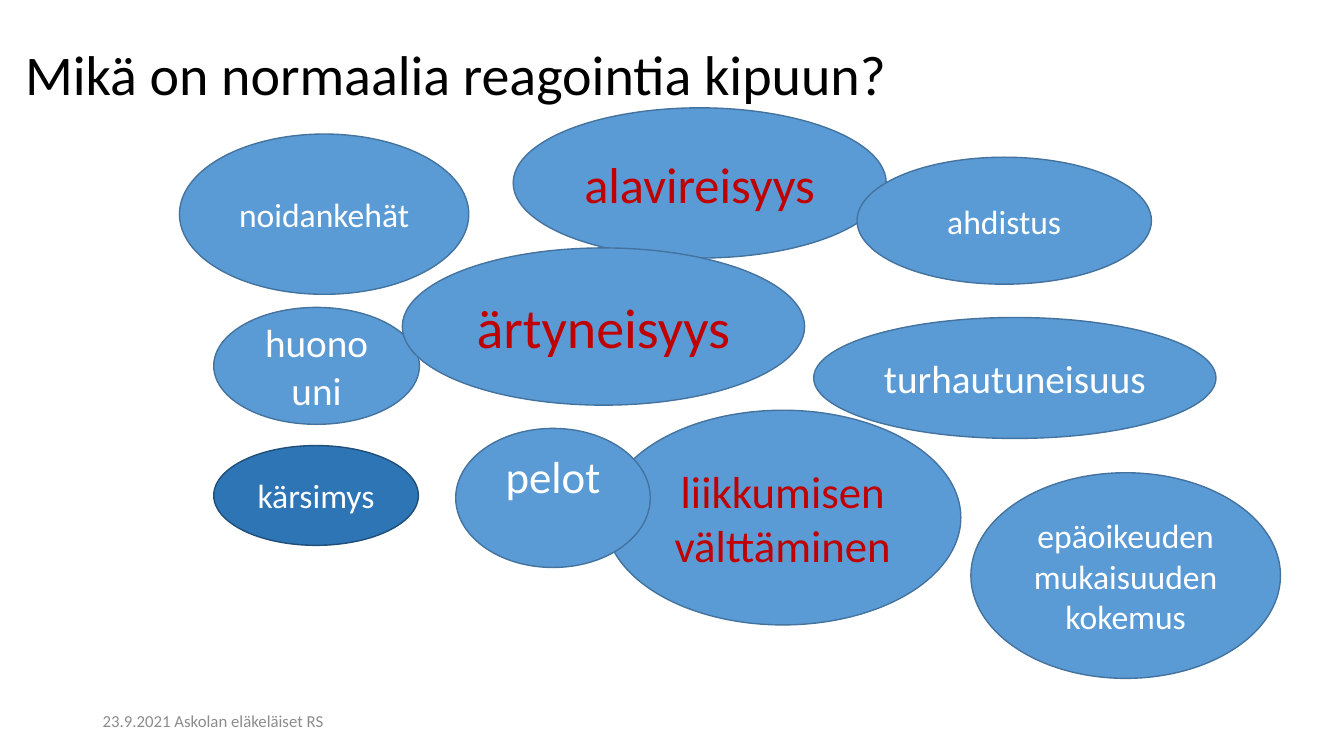
"""Builds a slide of overlapping ellipses naming normal reactions to pain."""
import pptx
import pptx.dml.color
import pptx.enum.shapes
import pptx.enum.text
import pptx.util

Inches = pptx.util.Inches
Pt = pptx.util.Pt
Anchor = pptx.enum.text.MSO_ANCHOR
Align = pptx.enum.text.PP_ALIGN

COLORS = {
    "black": "000000",
    "white": "FFFFFF",
    "red": "C00000",
    "grey": "8C8C8C",
    "blue": "5B9BD5",
    "blue_edge": "43739E",
    "deep": "2E75B6",
    "deep_edge": "1F4E79",
}


def color(name):
    return pptx.dml.color.RGBColor.from_string(COLORS[name])


def write(shape, text, size, ink, align):
    frame = shape.text_frame
    frame.word_wrap = True
    frame.vertical_anchor = Anchor.MIDDLE
    paragraph = frame.paragraphs[0]
    paragraph.alignment = align
    run = paragraph.add_run()
    run.text = text
    run.font.color.rgb = color(ink)
    for name, value in {"name": "Calibri", "size": Pt(size)}.items():
        setattr(run.font, name, value)
    return frame


deck = pptx.Presentation()
deck.slide_width = Inches(13.33)
deck.slide_height = Inches(7.5)
slide = deck.slides.add_slide(deck.slide_layouts[6])

title = slide.shapes.add_textbox(Inches(0.15), Inches(-0.02), Inches(10.83), Inches(1.58))
title_frame = write(title, "Mikä on normaalia reagointia kipuun?", 40, "black", Align.LEFT)
title_frame.paragraphs[0].line_spacing = 0.9

reactions = [
    ("alavireisyys", 5.09, 1.07, 3.7, 1.49, 36, "red", "blue"),
    ("huono uni", 2.12, 3.05, 2.04, 1.16, 28, "white", "blue"),
    ("noidankehät", 1.78, 1.33, 2.87, 1.59, 24, "white", "blue"),
    ("ärtyneisyys", 3.99, 2.46, 3.99, 1.56, 40, "red", "blue"),
    ("turhautuneisuus", 8.07, 3.15, 3.99, 1.2, 28, "white", "blue"),
    ("liikkumisen välttäminen", 6, 4.07, 3.53, 2.13, 32, "red", "blue"),
    ("ahdistus", 8.5, 1.56, 2.92, 1.26, 24, "white", "blue"),
    ("kärsimys", 2.12, 4.42, 2.03, 0.99, 24, "white", "deep"),
    ("pelot", 4.52, 4.25, 1.93, 1.38, 32, "white", "blue"),
    ("epäoikeudenmukaisuuden kokemus", 9.63, 4.69, 3.07, 2.04, 24, "white", "blue"),
]
for reaction, left, top, width, height, size, ink, fill in reactions:
    bubble = slide.shapes.add_shape(
        pptx.enum.shapes.MSO_SHAPE.OVAL,
        Inches(left), Inches(top), Inches(width), Inches(height),
    )
    bubble.shadow.inherit = False
    bubble.fill.solid()
    bubble.fill.fore_color.rgb = color(fill)
    bubble.line.color.rgb = color(fill + "_edge")
    bubble.line.width = Pt(1)
    bubble_frame = write(bubble, reaction, size, ink, Align.CENTER)
    if reaction == "pelot":
        bubble_frame.vertical_anchor = Anchor.TOP
        bubble_frame.margin_top = 0

footer = slide.shapes.add_textbox(Inches(0.92), Inches(6.95), Inches(3), Inches(0.4))
write(footer, "23.9.2021 Askolan eläkeläiset RS", 12, "grey", Align.LEFT)

deck.save("out.pptx")
